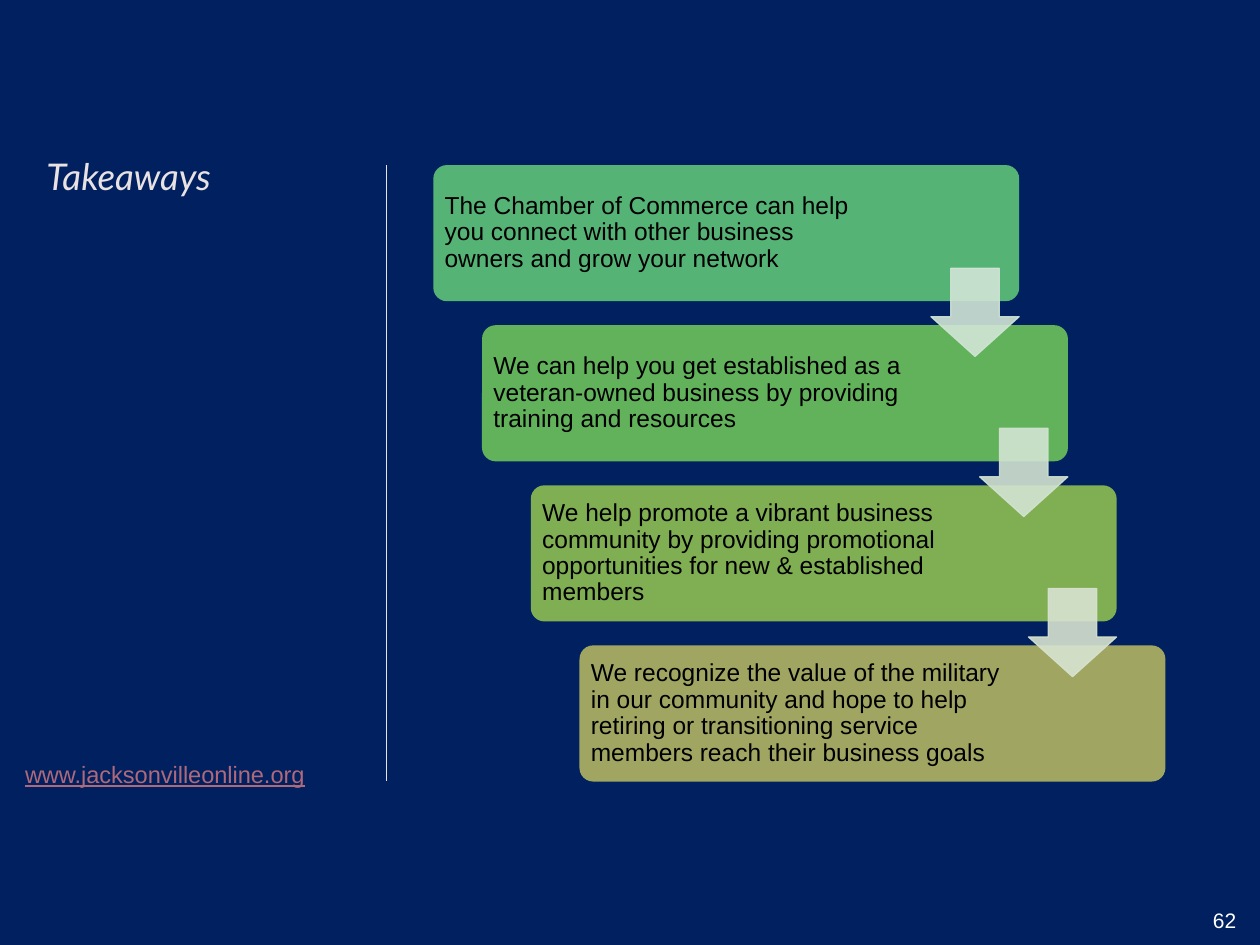
from dataclasses import dataclass
from typing import Optional

from lxml.etree import SubElement
from pptx import Presentation
from pptx.dml.color import RGBColor
from pptx.enum.shapes import MSO_CONNECTOR as Connector, MSO_SHAPE as Shape
from pptx.enum.text import MSO_ANCHOR as Anchor
from pptx.oxml.ns import qn
from pptx.util import Pt


@dataclass(frozen=True)
class Theme:
    background: str = "002060"
    light: str = "E8E2E3"
    link: str = "AE697A"
    number: str = "FFFFFF"
    body: str = "000000"
    title_font: str = "Lato"
    body_font: str = "Arial"
    title_size: float = 21
    body_size: float = 14
    link_size: float = 13.5
    number_size: float = 12
    line_width: float = 0.75


@dataclass(frozen=True)
class Box:
    x: float
    y: float
    w: float
    h: float

    def lengths(self) -> tuple:
        return Pt(self.x), Pt(self.y), Pt(self.w), Pt(self.h)


@dataclass(frozen=True)
class Takeaway:
    text: str
    fill: str
    text_width: float = 252
    arrow: Optional[str] = None


THEME = Theme()
FIRST_CARD = Box(247.6, 94.3, 334.8, 77.8)
STEP_X, STEP_Y = 27.85, 91.5
CARD_PAD = 2.3
ARROW_SIZE, ARROW_DROP = 50.4, 59

TAKEAWAYS = [
    Takeaway("The Chamber of Commerce can help you connect with other business "
             "owners and grow your network", "56B376", 244.8, "D1E5D6"),
    Takeaway("We can help you get established as a veteran-owned business by "
             "providing training and resources", "62B25C", arrow="D3E4D2"),
    Takeaway("We help promote a vibrant business community by providing promotional "
             "opportunities for new & established members", "80AE53", arrow="D8E3D1"),
    Takeaway("We recognize the value of the military in our community and hope to help "
             "retiring or transitioning service members reach their business goals",
             "A0A662"),
]


def rgb(value: str) -> RGBColor:
    return RGBColor.from_string(value)


def set_opacity(fill, percent: int) -> None:
    """Add an alpha value to a solid fill."""
    color = fill._xPr.find(qn("a:solidFill"))[0]
    SubElement(color, qn("a:alpha")).set("val", str(percent * 1000))


def add_text(s, box: Box, text: str, size: float, color: str,
             font: str = THEME.body_font, inset: tuple = (7.2, 3.6),
             anchor=Anchor.TOP, spacing: float = 1.0,
             italic: bool = False, underline: bool = False) -> None:
    tf = s.shapes.add_textbox(*box.lengths()).text_frame
    tf.word_wrap = True
    tf.vertical_anchor = anchor
    tf.margin_left = tf.margin_right = Pt(inset[0])
    tf.margin_top = tf.margin_bottom = Pt(inset[1])
    p = tf.paragraphs[0]
    p.line_spacing = spacing
    r = p.add_run()
    r.text = text
    r.font.name = font
    r.font.size = Pt(size)
    r.font.color.rgb = rgb(color)
    r.font.italic = italic
    r.font.underline = underline


def add_card(s, box: Box, item: Takeaway) -> None:
    sp = s.shapes.add_shape(Shape.ROUNDED_RECTANGLE, *box.lengths())
    sp.adjustments[0] = 0.1
    sp.shadow.inherit = False
    sp.fill.solid()
    sp.fill.fore_color.rgb = rgb(item.fill)
    sp.line.fill.background()
    text_box = Box(box.x + CARD_PAD, box.y + CARD_PAD,
                   item.text_width, box.h - 2 * CARD_PAD)
    add_text(s, text_box, item.text, THEME.body_size, THEME.body,
             inset=(4.2, 4.2), anchor=Anchor.MIDDLE, spacing=0.9)


def add_arrow(s, card: Box, color: str) -> None:
    """Place a down arrow flush with the card's right edge."""
    box = Box(card.x + card.w - ARROW_SIZE, card.y + ARROW_DROP, ARROW_SIZE, ARROW_SIZE)
    sp = s.shapes.add_shape(Shape.DOWN_ARROW, *box.lengths())
    sp.adjustments[0], sp.adjustments[1] = 0.55, 0.45
    sp.shadow.inherit = False
    sp.line.width = Pt(THEME.line_width)
    for fill in (sp.fill, sp.line.fill):
        fill.solid()
        fill.fore_color.rgb = rgb(color)
        set_opacity(fill, 90)


def add_divider(s, x: float, top: float, bottom: float) -> None:
    line = s.shapes.add_connector(Connector.STRAIGHT, Pt(x), Pt(top), Pt(x), Pt(bottom))
    line.line.color.rgb = rgb(THEME.light)
    line.line.width = Pt(THEME.line_width)
    SubElement(line._element.spPr, qn("a:effectLst"))


def main() -> None:
    prs = Presentation()
    prs.slide_width, prs.slide_height = Pt(720), Pt(540)
    s = prs.slides.add_slide(prs.slide_layouts[6])
    s.background.fill.solid()
    s.background.fill.fore_color.rgb = rgb(THEME.background)

    add_text(s, Box(26.6, 90.7, 168.5, 352), "Takeaways", THEME.title_size, THEME.light,
             font=THEME.title_font, inset=(0, 0), spacing=0.9, italic=True)
    add_divider(s, 221, 94.3, 446.4)

    cards = [Box(FIRST_CARD.x + i * STEP_X, FIRST_CARD.y + i * STEP_Y,
                 FIRST_CARD.w, FIRST_CARD.h) for i in range(len(TAKEAWAYS))]
    for card, item in zip(cards, TAKEAWAYS):
        add_card(s, card, item)
    for card, item in zip(cards, TAKEAWAYS):
        if item.arrow:
            add_arrow(s, card, item.arrow)

    add_text(s, Box(7.2, 430.6, 226.8, 40.3), "www.jacksonvilleonline.org",
             THEME.link_size, THEME.link, underline=True)
    add_text(s, Box(686, 514.8, 34, 21.6), "62", THEME.number_size, THEME.number)
    prs.save("out.pptx")


if __name__ == "__main__":
    main()
